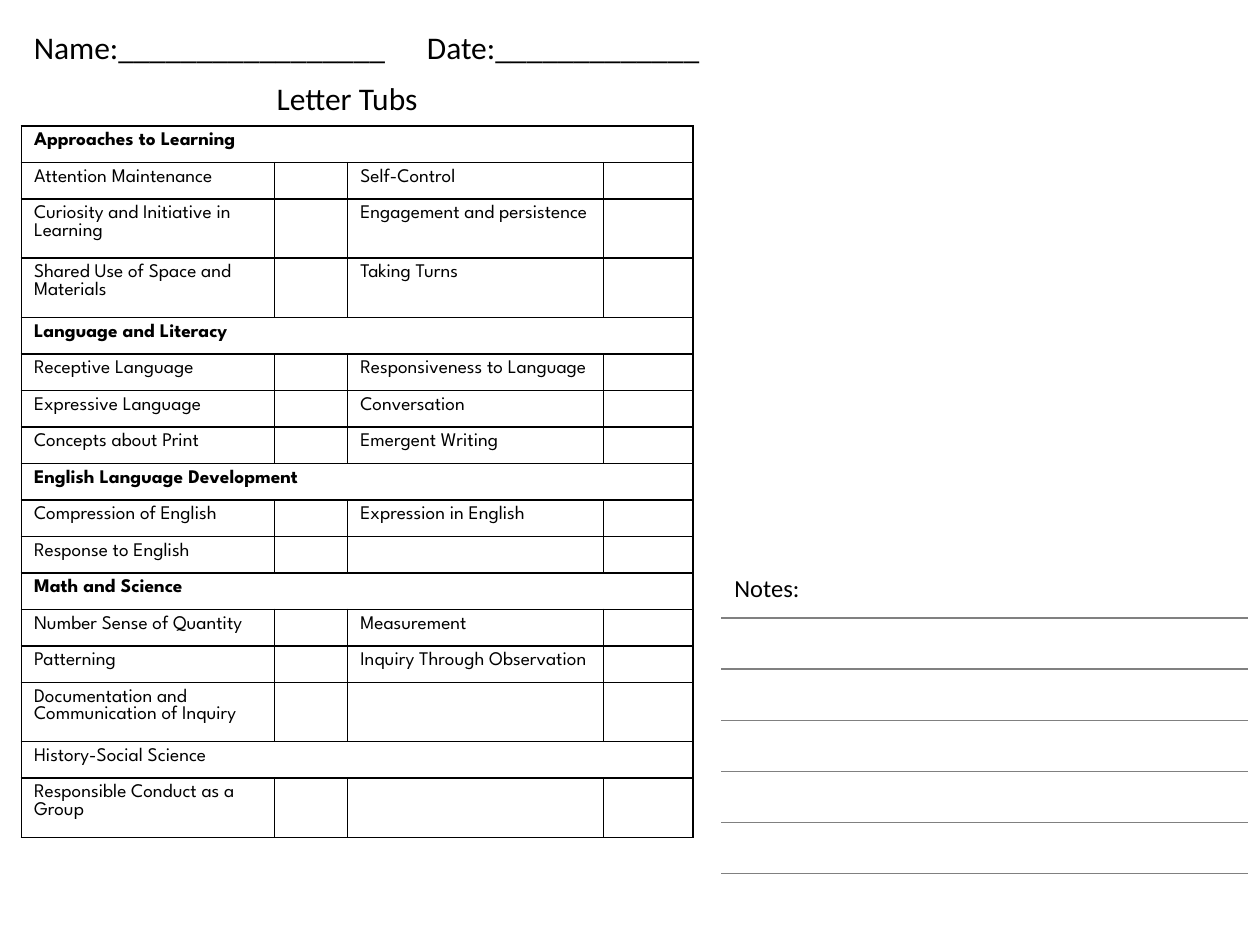
from lxml.etree import SubElement
from pptx import Presentation
from pptx.dml.color import RGBColor
from pptx.enum.text import MSO_AUTO_SIZE, PP_ALIGN
from pptx.oxml.ns import qn
from pptx.util import Inches, Pt

THEME = {
    "black": "000000", "white": "FFFFFF", "rule": "808080",
    "text_font": "Calibri", "table_font": "League Spartan",
    "heading": 18, "notes": 14, "cell": 11, "border": 1,
}

# Section title, whether it is bold, then its (left, right) skills
SECTIONS = [
    ("Approaches to Learning", True, [
        ("Attention Maintenance", "Self-Control"),
        ("Curiosity and Initiative in Learning", "Engagement and persistence"),
        ("Shared Use of Space and Materials", "Taking Turns")]),
    ("Language and Literacy", True, [
        ("Receptive Language", "Responsiveness to Language"),
        ("Expressive Language", "Conversation"),
        ("Concepts about Print", "Emergent Writing")]),
    ("English Language Development", True, [
        ("Compression of English", "Expression in English"),
        ("Response to English", "")]),
    ("Math and Science", True, [
        ("Number Sense of Quantity", "Measurement"),
        ("Patterning", "Inquiry Through Observation"),
        ("Documentation and Communication of Inquiry", "")]),
    ("History-Social Science", False, [
        ("Responsible Conduct as a Group", "")]),
]
SKILL_COLUMNS = [2.01, 0.58, 2.03, 0.71]
ONE_LINE, TWO_LINES = 0.29, 0.47
LONGEST_LINE = 27
NOTE_ROWS, NOTE_HEIGHT = 7, 2.84


def write(text_frame, text, *, size, font, bold=False, align=None):
    paragraph = text_frame.paragraphs[0]
    if align is not None:
        paragraph.alignment = align
    if not text:
        SubElement(paragraph._p, qn("a:endParaRPr"), sz=str(size * 100))
        return paragraph
    run = paragraph.add_run()
    run.text = text
    run.font.size, run.font.name, run.font.bold = Pt(size), font, bold
    run.font.color.rgb = RGBColor.from_string(THEME["black"])
    return paragraph


def add_text(slide, text, left, top, width, height, *, wrap=True, **style):
    box = slide.shapes.add_textbox(*map(Inches, (left, top, width, height)))
    box.text_frame.word_wrap = wrap
    box.text_frame.auto_size = MSO_AUTO_SIZE.SHAPE_TO_FIT_TEXT
    return write(box.text_frame, text, font=THEME["text_font"], **style)


def add_plain_table(slide, left, top, columns, rows):
    frame = slide.shapes.add_table(
        len(rows), len(columns),
        *map(Inches, (left, top, sum(columns), sum(rows))))
    table = frame.table
    table.first_row = table.horz_banding = False
    for column, width in zip(table.columns, columns):
        column.width = Inches(width)
    for row, height in zip(table.rows, rows):
        row.height = Inches(height)
    return table


def paint_cell(cell, left, right, top, bottom):
    """Give a cell its four border colours and a white fill."""
    properties = cell._tc.get_or_add_tcPr()
    for side, color in zip("LRTB", (left, right, top, bottom)):
        line = SubElement(properties, qn(f"a:ln{side}"),
                          w=str(Pt(THEME["border"])))
        fill = SubElement(line, qn("a:solidFill"))
        SubElement(fill, qn("a:srgbClr"), val=color)
    cell.fill.solid()
    cell.fill.fore_color.rgb = RGBColor.from_string(THEME["white"])


def add_skills(slide):
    rows = []
    for title, bold, skills in SECTIONS:
        rows.append(([title, "", "", ""], True, bold))
        rows += [([left, "", right, ""], False, False) for left, right in skills]
    heights = [
        TWO_LINES if max(map(len, texts)) > LONGEST_LINE and not is_title
        else ONE_LINE for texts, is_title, _ in rows]
    table = add_plain_table(slide, 0.17, 1, SKILL_COLUMNS, heights)
    for row, (texts, is_title, bold) in enumerate(rows):
        for column, text in enumerate(texts):
            cell = table.cell(row, column)
            paint_cell(cell, *[THEME["black"]] * 4)
            write(cell.text_frame, text, size=THEME["cell"],
                  font=THEME["table_font"], bold=bold)
        if is_title:
            table.cell(row, 0).merge(table.cell(row, len(texts) - 1))


def add_note_lines(slide):
    table = add_plain_table(slide, 5.73, 4.5, [4.17],
                            [NOTE_HEIGHT / NOTE_ROWS] * NOTE_ROWS)
    white, rule = THEME["white"], THEME["rule"]
    for row in range(NOTE_ROWS):
        cell = table.cell(row, 0)
        paint_cell(cell, white, white, rule if row else white,
                   rule if row < NOTE_ROWS - 1 else white)
        write(cell.text_frame, "", size=THEME["notes"], font=THEME["text_font"])


def main():
    presentation = Presentation()
    presentation.slide_width, presentation.slide_height = Inches(10), Inches(7.5)
    slide = presentation.slides.add_slide(presentation.slide_layouts[6])

    add_skills(slide)
    add_text(slide, "Letter Tubs", 0.17, 0.58, 5.17, 0.4,
             size=THEME["heading"], align=PP_ALIGN.CENTER)
    name_line = add_text(
        slide, "Name:" + "_" * 17 + "\tDate:" + "_" * 13,
        0.17, 0.17, 5.57, 0.4, size=THEME["heading"])
    tabs = SubElement(name_line._p.get_or_add_pPr(), qn("a:tabLst"))
    SubElement(tabs, qn("a:tab"), pos=str(Inches(3.12)), algn="l")
    add_note_lines(slide)
    add_text(slide, "Notes:", 5.73, 4.5, 0.72, 0.34,
             wrap=False, size=THEME["notes"])

    presentation.save("out.pptx")


if __name__ == "__main__":
    main()
